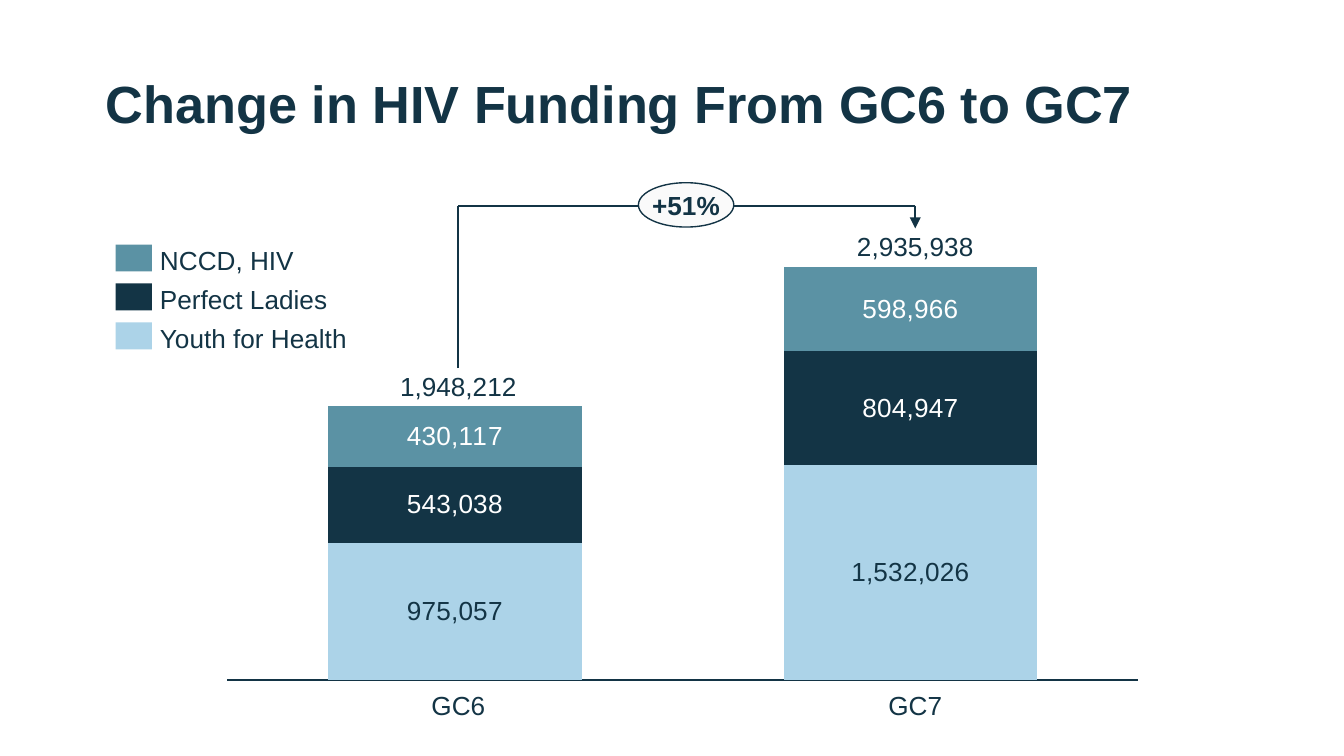
"""Build a slide that compares HIV funding in GC6 and GC7."""
from dataclasses import dataclass

from lxml import etree
from pptx import Presentation
from pptx.chart.data import CategoryChartData
from pptx.dml.color import RGBColor
from pptx.enum.chart import XL_CHART_TYPE, XL_LABEL_POSITION, XL_TICK_LABEL_POSITION, XL_TICK_MARK
from pptx.enum.shapes import MSO_CONNECTOR, MSO_SHAPE
from pptx.enum.text import MSO_ANCHOR, MSO_AUTO_SIZE, PP_ALIGN
from pptx.oxml import parse_xml
from pptx.oxml.ns import nsdecls, qn
from pptx.slide import Slide
from pptx.util import Inches, Pt

STACKED = XL_CHART_TYPE.COLUMN_STACKED
CENTER_LABEL = XL_LABEL_POSITION.CENTER
NO_LABELS = XL_TICK_LABEL_POSITION.NONE
NO_TICK = XL_TICK_MARK.NONE
RECT, OVAL = MSO_SHAPE.RECTANGLE, MSO_SHAPE.OVAL
STRAIGHT = MSO_CONNECTOR.STRAIGHT
TOP, MIDDLE, BOTTOM = MSO_ANCHOR.TOP, MSO_ANCHOR.MIDDLE, MSO_ANCHOR.BOTTOM
LEFT, CENTER = PP_ALIGN.LEFT, PP_ALIGN.CENTER
NO_FIT = MSO_AUTO_SIZE.NONE

FONT = "Arial"
COLORS = {
    "navy": "133445",
    "teal": "5B92A4",
    "sky": "ACD3E8",
    "pale": "FAFAFA",
    "white": "FFFFFF",
}


@dataclass(frozen=True)
class Fund:
    name: str
    values: tuple[int, int]
    fill: str
    ink: str
    width: float


@dataclass(frozen=True)
class Cycle:
    name: str
    mid: float
    top: float


FUNDS = (
    Fund("Youth for Health", (975057, 1532026), "sky", "navy", 1.41),
    Fund("Perfect Ladies", (543038, 804947), "navy", "white", 1.27),
    Fund("NCCD, HIV", (430117, 598966), "teal", "white", 1.02),
)
CYCLES = (Cycle("GC6", 3.41, 2.78), Cycle("GC7", 6.81, 1.74))
TOTALS = (1948212, 2935938)
ARROW_Y = 1.53


def color(key: str) -> RGBColor:
    """Look up a palette colour."""
    return RGBColor.from_string(COLORS[key])


def set_font(font, size: float, ink: str, bold: bool = False) -> None:
    """Apply the slide's typeface."""
    font.name, font.size, font.bold = FONT, Pt(size), bold
    font.color.rgb = color(ink)


def write(shape, text: str, size: float = 14, bold: bool = False, align=LEFT, anchor=MIDDLE,
          inset: tuple[float, float] = (0, 0), wrap: bool = False, spacing: float = 1.0) -> None:
    """Set and format one line of text in a shape."""
    frame = shape.text_frame
    frame.text = text
    frame.auto_size = NO_FIT
    frame.word_wrap = wrap
    frame.vertical_anchor = anchor
    frame.margin_left = frame.margin_right = Inches(inset[0])
    frame.margin_top = frame.margin_bottom = Inches(inset[1])
    line = frame.paragraphs[0]
    line.alignment, line.line_spacing = align, spacing
    set_font(line.runs[0].font, size, "navy", bold)


def add_text(slide: Slide, text: str, left: float, top: float, width: float, height: float,
             **style) -> None:
    """Add a text box."""
    box = slide.shapes.add_textbox(Inches(left), Inches(top), Inches(width), Inches(height))
    write(box, text, **style)


def add_block(slide: Slide, kind, left: float, top: float, width: float, height: float, fill: str):
    """Add a filled shape without outline."""
    block = slide.shapes.add_shape(kind, Inches(left), Inches(top), Inches(width), Inches(height))
    block.shadow.inherit = False
    block.fill.solid()
    block.fill.fore_color.rgb = color(fill)
    block.line.fill.background()
    return block


def add_line(slide: Slide, start: tuple[float, float], end: tuple[float, float],
             arrow: bool = False) -> None:
    """Add a straight line, with an arrowhead if asked."""
    line = slide.shapes.add_connector(STRAIGHT, *map(Inches, start + end))
    line.line.color.rgb = color("navy")
    line.line.width = Pt(1)
    if arrow:
        etree.SubElement(line.line._get_or_add_ln(), qn("a:tailEnd"), type="triangle")
    etree.SubElement(line._element.spPr, qn("a:effectLst"))


def add_bars(slide: Slide) -> None:
    """Add the stacked column chart."""
    data = CategoryChartData(number_format="#,##0")
    data.categories = ["1", "2"]
    for fund in FUNDS:
        data.add_series(fund.name, fund.values)
    frame = slide.shapes.add_chart(STACKED, Inches(1.62), Inches(1.89), Inches(6.99), Inches(3.27), data)
    chart = frame.chart
    chart.has_legend = chart.has_title = False
    set_font(chart.font, 14, "navy")
    base, scale = chart.category_axis, chart.value_axis
    base.tick_label_position = NO_LABELS
    base.major_tick_mark = base.minor_tick_mark = NO_TICK
    base.format.line.color.rgb = color("navy")
    base.format.line.width = Pt(0.75)
    scale.visible = scale.has_major_gridlines = False
    scale.minimum_scale = 0
    scale.maximum_scale = max(map(sum, zip(*(fund.values for fund in FUNDS))))
    plot = chart.plots[0]
    plot.gap_width, plot.overlap, plot.vary_by_categories = 80, 100, False
    for fund, series in zip(FUNDS, plot.series):
        series.format.fill.solid()
        series.format.fill.fore_color.rgb = color(fund.fill)
        labels = series.data_labels
        labels.show_value = True
        labels.position = CENTER_LABEL
        labels.number_format, labels.number_format_is_linked = "#,##0", False
        set_font(labels.font, 14, fund.ink)
    area = chart._chartSpace.chart.plotArea
    for old in area.findall(qn("c:layout")):
        area.remove(old)
    rule = '<c:layoutTarget val="inner"/><c:xMode val="edge"/><c:yMode val="edge"/>'
    sides = {"x": 0.01, "y": 0.03, "w": 0.97, "h": 0.94}
    rule += "".join(f'<c:{side} val="{part}"/>' for side, part in sides.items())
    area.insert(0, parse_xml(
        f'<c:layout {nsdecls("c")}><c:manualLayout>{rule}</c:manualLayout></c:layout>'))


def main() -> None:
    """Build and save the slide."""
    deck = Presentation()
    deck.slide_width, deck.slide_height = Inches(10), Inches(10 * 9 / 16)
    slide = deck.slides.add_slide(deck.slide_layouts[6])
    add_bars(slide)

    first, last = CYCLES
    add_line(slide, (first.mid, 2.74), (first.mid, ARROW_Y))
    add_line(slide, (first.mid, ARROW_Y), (last.mid, ARROW_Y))
    add_line(slide, (last.mid, ARROW_Y), (last.mid, 1.7), arrow=True)
    for cycle, total in zip(CYCLES, TOTALS):
        add_text(slide, f"{total:,}", cycle.mid - 0.46, cycle.top, 0.92, 0.21,
                 align=CENTER, anchor=BOTTOM, spacing=0.9)
        add_text(slide, cycle.name, cycle.mid - 0.21, 5.13, 0.42, 0.23, align=CENTER, anchor=TOP)

    growth = add_block(slide, OVAL, 4.75, 1.36, 0.71, 0.33, "pale")
    growth.line.color.rgb = color("navy")
    growth.line.width = Pt(0.75)
    write(growth, "+51%", bold=True, align=CENTER)

    for row, fund in enumerate(reversed(FUNDS)):
        top = 1.82 + 0.29 * row
        add_block(slide, RECT, 0.86, top, 0.27, 0.2, fund.fill)
        add_text(slide, fund.name, 1.19, top, fund.width, 0.23)

    add_text(slide, "Change in HIV Funding From GC6 to GC7", 0.69, 0.3, 8.62, 0.98,
             size=28, bold=True, inset=(0.1, 0.05), wrap=True, spacing=0.9)
    deck.save("out.pptx")


if __name__ == "__main__":
    main()
